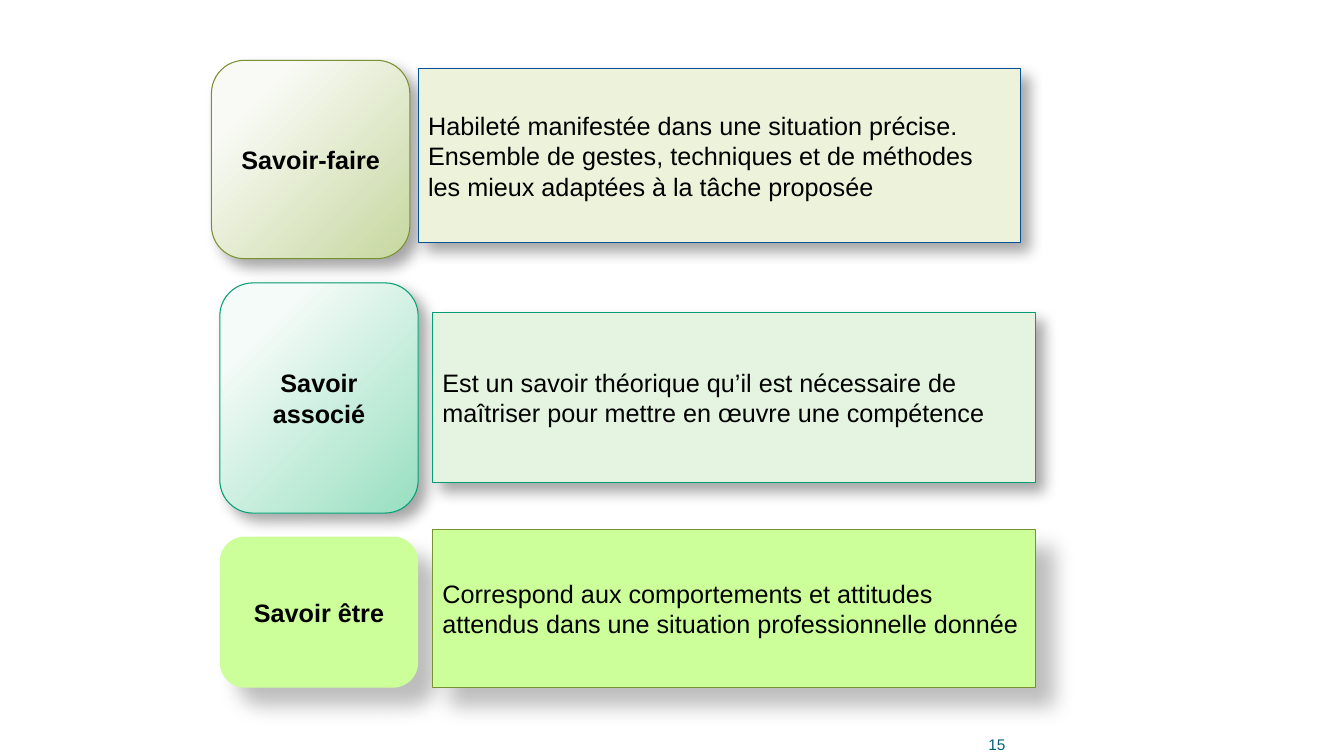
from dataclasses import dataclass

from lxml import etree
from pptx import Presentation
from pptx.dml.color import RGBColor
from pptx.enum.shapes import MSO_SHAPE
from pptx.enum.text import MSO_ANCHOR, PP_ALIGN
from pptx.oxml.ns import qn
from pptx.util import Cm, Pt

ROUNDED, RECTANGLE = MSO_SHAPE.ROUNDED_RECTANGLE, MSO_SHAPE.RECTANGLE
CENTER, LEFT, RIGHT = PP_ALIGN.CENTER, PP_ALIGN.LEFT, PP_ALIGN.RIGHT
MIDDLE, BOTTOM = MSO_ANCHOR.MIDDLE, MSO_ANCHOR.BOTTOM
BLANK_LAYOUT = 6


@dataclass(frozen=True)
class Theme:
    """Colours, type sizes and effects of the slide."""
    font: str = "Arial"
    body_size: float = 18
    number_size: float = 11
    border: float = 0.75
    text: str = "000000"
    number: str = "04617B"
    olive: str = "7A9131"
    teal: str = "059D74"
    blue: str = "045197"
    lime: str = "CCFF99"
    olive_fade: tuple = ("F9FAF5", "C6D79F")
    teal_fade: tuple = ("F5FBF8", "97DFC0")
    pale_olive: str = "EDF3DB"
    pale_green: str = "E5F4E0"
    close_shadow: tuple = (35, 10.2, 8)
    far_shadow: tuple = (26, 15, 18)


THEME = Theme()
LABEL_WIDTH = 5.0
DEFINITION_WIDTH = 15.19

SKILLS = [
    dict(label="Savoir-faire",
         definition="Habileté manifestée dans une situation précise. Ensemble de gestes, "
                    "techniques et de méthodes les mieux adaptées à la tâche proposée",
         label_box=(5.33, 1.52, LABEL_WIDTH, 5.0),
         definition_box=(10.54, 1.73, DEFINITION_WIDTH, 4.39),
         label_fill=THEME.olive_fade, label_line=THEME.olive,
         definition_fill=THEME.pale_olive, definition_line=THEME.blue,
         shadow=THEME.close_shadow),
    dict(label="Savoir associé",
         definition="Est un savoir théorique qu’il est nécessaire de maîtriser "
                    "pour mettre en œuvre une compétence",
         label_box=(5.54, 7.13, LABEL_WIDTH, 5.8),
         definition_box=(10.9, 7.87, DEFINITION_WIDTH, 4.3),
         label_fill=THEME.teal_fade, label_line=THEME.teal,
         definition_fill=THEME.pale_green, definition_line=THEME.teal,
         shadow=THEME.close_shadow),
    dict(label="Savoir être",
         definition="Correspond aux comportements et attitudes attendus dans une "
                    "situation professionnelle donnée",
         label_box=(5.54, 13.52, LABEL_WIDTH, 3.81),
         definition_box=(10.9, 13.34, DEFINITION_WIDTH, 3.99),
         label_fill=THEME.lime, label_line=None,
         definition_fill=THEME.lime, definition_line=THEME.olive,
         shadow=THEME.far_shadow),
]


def write_text(holder, text, align, anchor, **font_format):
    """Put one formatted paragraph into a shape or text box."""
    frame = holder.text_frame
    frame.word_wrap = True
    frame.vertical_anchor = anchor
    paragraph = frame.paragraphs[0]
    paragraph.alignment = align
    run = paragraph.add_run()
    run.text = text
    color = font_format.pop("color", THEME.text)
    run.font.color.rgb = RGBColor.from_string(color)
    values = {"name": THEME.font, "size": Pt(THEME.body_size), **font_format}
    for key, value in values.items():
        setattr(run.font, key, value)


def fade_from_corner(fill, colors):
    """Fill with a circular gradient that starts at the top left corner."""
    fill.gradient()
    for stop, color, position in zip(fill.gradient_stops, colors, (0.2, 1)):
        stop.color.rgb = RGBColor.from_string(color)
        stop.position = position


def set_circular_path(shape):
    """Turn the linear gradient of a shape into a circular one."""
    gradient = shape.element.spPr.find(qn("a:gradFill"))
    gradient.remove(gradient.find(qn("a:lin")))
    circle = etree.SubElement(gradient, qn("a:path"), path="circle")
    etree.SubElement(circle, qn("a:fillToRect"),
                     l="-15000", t="-15000", r="115000", b="115000")


def cast_shadow(shape, alpha, blur, distance):
    """Give a shape a soft black shadow towards the lower right."""
    shape.shadow.inherit = False
    effects = shape.element.spPr.find(qn("a:effectLst"))
    shadow = etree.SubElement(effects, qn("a:outerShdw"), blurRad=str(Pt(blur)),
                              dist=str(Pt(distance)), dir="2700000",
                              algn="tl", rotWithShape="0")
    color = etree.SubElement(shadow, qn("a:srgbClr"), val="000000")
    etree.SubElement(color, qn("a:alpha"), val=str(alpha * 1000))


def add_panel(slide, preset, box, fill, line, shadow):
    """Draw a filled, outlined and shadowed panel in the given box."""
    panel = slide.shapes.add_shape(preset, *map(Cm, box))
    if isinstance(fill, tuple):
        fade_from_corner(panel.fill, fill)
        set_circular_path(panel)
    else:
        panel.fill.solid()
        panel.fill.fore_color.rgb = RGBColor.from_string(fill)
    if line:
        panel.line.color.rgb = RGBColor.from_string(line)
        panel.line.width = Pt(THEME.border)
    else:
        panel.line.fill.background()
    cast_shadow(panel, *shadow)
    return panel


def add_skill(slide, skill):
    """Place a skill label with its definition beside it."""
    label = add_panel(slide, ROUNDED, skill["label_box"], skill["label_fill"],
                      skill["label_line"], skill["shadow"])
    write_text(label, skill["label"], CENTER, MIDDLE, bold=True)
    definition = add_panel(slide, RECTANGLE, skill["definition_box"],
                           skill["definition_fill"], skill["definition_line"],
                           skill["shadow"])
    write_text(definition, skill["definition"], LEFT, MIDDLE)


def add_page_number(slide, number, box):
    """Write the page number in the lower right of its box."""
    page_number = slide.shapes.add_textbox(*map(Cm, box))
    for side in ("left", "top", "right", "bottom"):
        setattr(page_number.text_frame, f"margin_{side}", 0)
    write_text(page_number, number, RIGHT, BOTTOM,
               size=Pt(THEME.number_size), color=THEME.number)


def main():
    """Build and save the slide."""
    deck = Presentation()
    deck.slide_width, deck.slide_height = Cm(33.87), Cm(19.05)
    slide = deck.slides.add_slide(deck.slide_layouts[BLANK_LAYOUT])
    add_page_number(slide, "15", (23.16, 18.35, 2.18, 0.64))
    for skill in SKILLS:
        add_skill(slide, skill)
    deck.save("out.pptx")


if __name__ == "__main__":
    main()
